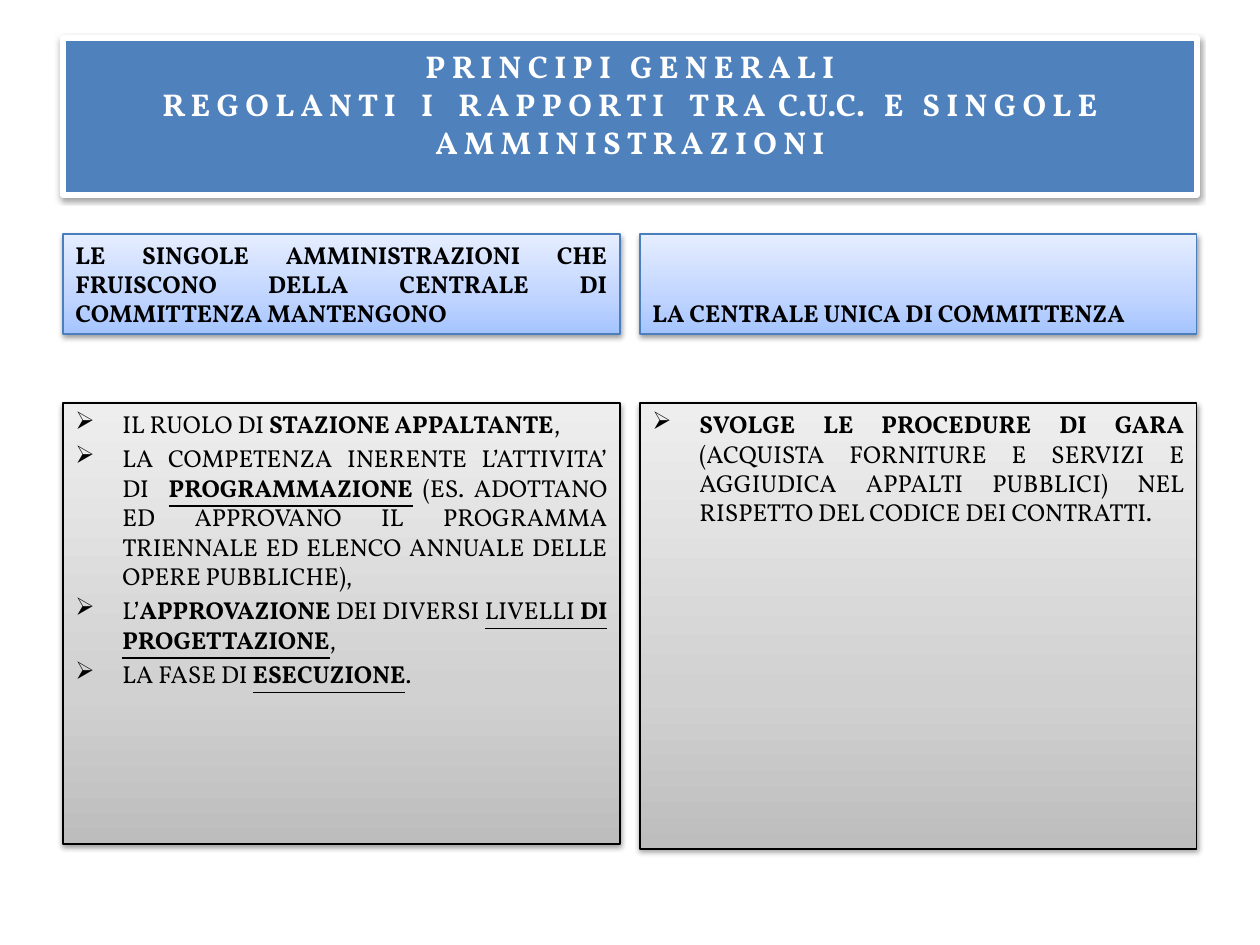
"""Slide on the principles governing relations between the C.U.C. and single administrations."""
import copy
import pptx
import pptx.util
import pptx.dml.color
import pptx.enum.shapes
import pptx.enum.text
import pptx.oxml
import pptx.oxml.ns

PX = 914400 // 126
COLORS = {"white": "FFFFFF", "black": "000000", "title": "4F81BD", "head_line": "4B7EBC"}
HEAD_STOPS = ["A4C4FF", "BFD4FF", "E6EEFF"]
BODY_STOPS = ["BDBDBD", "D1D1D1", "EEEEEE"]
ALIGN = pptx.enum.text.PP_ALIGN
ANCHOR = pptx.enum.text.MSO_ANCHOR
SHADOW = (
    '<a:outerShdw %s blurRad="40000" dist="20000" dir="5400000" rotWithShape="0">'
    '<a:srgbClr val="000000"><a:alpha val="38000"/></a:srgbClr></a:outerShdw>'
) % pptx.oxml.ns.nsdecls("a")
BULLET = '<a:buChar %s char="➢"/>' % pptx.oxml.ns.nsdecls("a")
PLAIN, BOLD, UNDER = {}, {"bold": True}, {"underline": True}
BOLD_UNDER = {"bold": True, "underline": True}


def rgb(value):
    return pptx.dml.color.RGBColor.from_string(value)


def add_box(box, stops, line, width, anchor, paragraphs, size, color, align, before, bullet):
    sp = s.shapes.add_shape(pptx.enum.shapes.MSO_SHAPE.RECTANGLE, *[v * PX for v in box])
    if len(stops) == 1:
        sp.fill.solid()
        sp.fill.fore_color.rgb = rgb(stops[0])
    else:
        sp.fill.gradient()
        sp.fill.gradient_angle = 90
        first = sp.fill.gradient_stops[0]._gs
        first.addnext(copy.deepcopy(first))
        for stop, position, value in zip(sp.fill.gradient_stops, (0, 0.35, 1), stops):
            stop.position = position
            stop.color.rgb = rgb(value)
    sp.line.color.rgb = rgb(line)
    sp.line.width = pptx.util.Pt(width)
    sp.shadow.inherit = False
    effects = sp._element.spPr.find(pptx.oxml.ns.qn("a:effectLst"))
    effects.append(pptx.oxml.parse_xml(SHADOW))
    tf = sp.text_frame
    tf.word_wrap = True
    tf.vertical_anchor = anchor
    for i, runs in enumerate(paragraphs):
        p = tf.add_paragraph() if i else tf.paragraphs[0]
        p.alignment = align
        p.space_before = pptx.util.Pt(before)
        if bullet:
            pPr = p._p.get_or_add_pPr()
            pPr.set("marL", str(47 * PX))
            pPr.set("indent", str(-47 * PX))
            pPr.append(pptx.oxml.parse_xml(BULLET))
        for j, line_text in enumerate(runs):
            text, style = line_text
            for k, part in enumerate(text.split("\n")):
                if k:
                    p.add_line_break()
                r = p.add_run()
                r.text = part
                r.font.color.rgb = rgb(color)
                base = {"name": "Vollkorn", "size": pptx.util.Pt(size), "bold": False}
                for name, value in {**base, **style}.items():
                    setattr(r.font, name, value)
    return sp


prs = pptx.Presentation()
prs.slide_width = pptx.util.Inches(10)
prs.slide_height = pptx.util.Inches(7.5)
s = prs.slides.add_slide(prs.slide_layouts[6])

title = (
    "P R I N C I P I   G E N E R A L I\n"
    "R E G O L A N T I    I    R A P P O R T I    T R A  C.U.C.   E   S I N G O L E\n"
    "A M M I N I S T R A Z I O N I"
)
sp = add_box((63, 38, 1134, 157), [COLORS["title"]], COLORS["white"], 3, ANCHOR.MIDDLE,
             [[(title, BOLD)]], 18, COLORS["white"], ALIGN.CENTER, 0, False)
sp.text_frame.margin_bottom = 32 * PX

columns = [
    (
        "LE SINGOLE AMMINISTRAZIONI CHE FRUISCONO DELLA CENTRALE DI COMMITTENZA MANTENGONO",
        441,
        [
            [("IL RUOLO DI ", PLAIN), ("STAZIONE APPALTANTE", BOLD), (",", PLAIN)],
            [("LA COMPETENZA INERENTE L’ATTIVITA’ DI  ", PLAIN), ("PROGRAMMAZIONE", BOLD_UNDER),
             (" (ES. ADOTTANO ED APPROVANO IL PROGRAMMA TRIENNALE ED ELENCO ANNUALE "
              "DELLE OPERE PUBBLICHE),", PLAIN)],
            [("L’", PLAIN), ("APPROVAZIONE ", BOLD), ("DEI DIVERSI ", PLAIN), ("LIVELLI", UNDER),
             (" DI PROGETTAZIONE", BOLD_UNDER), (",", PLAIN)],
            [("LA FASE DI ", PLAIN), ("ESECUZIONE", BOLD_UNDER), (".", PLAIN)],
        ],
    ),
    (
        "LA CENTRALE UNICA DI COMMITTENZA",
        446,
        [
            [("SVOLGE LE PROCEDURE DI GARA ", BOLD),
             ("(ACQUISTA FORNITURE E SERVIZI E AGGIUDICA APPALTI PUBBLICI) NEL RISPETTO "
              "DEL CODICE DEI CONTRATTI.", PLAIN)],
        ],
    ),
]
for i, (heading, height, items) in enumerate(columns):
    left = 63 + 577 * i
    add_box((left, 234, 557, 100), HEAD_STOPS, COLORS["head_line"], 0.75, ANCHOR.BOTTOM,
            [[(heading, BOLD)]], 14, COLORS["black"], ALIGN.JUSTIFY, 2.8, False)
    add_box((left, 403, 557, height), BODY_STOPS, COLORS["black"], 0.75, ANCHOR.TOP,
            items, 14, COLORS["black"], ALIGN.JUSTIFY, 2.8, True)

prs.save("out.pptx")
